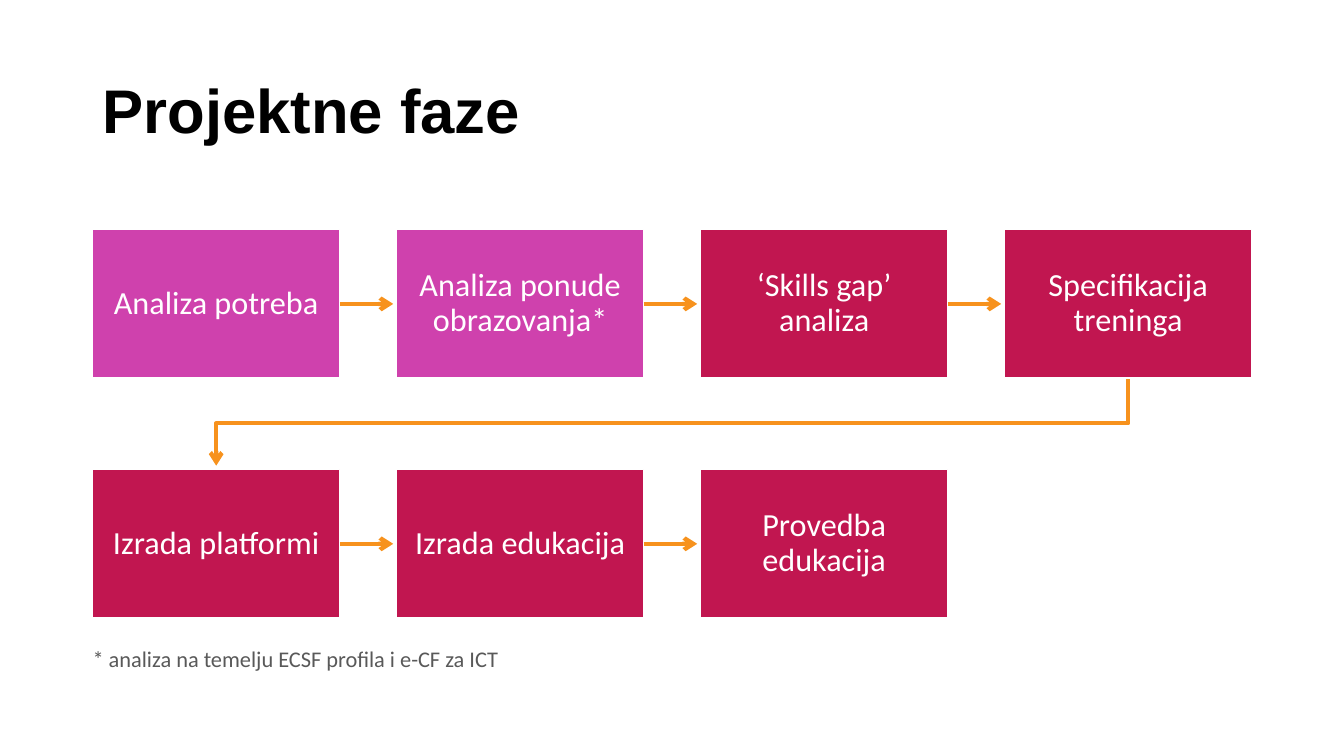
from dataclasses import dataclass

from lxml.etree import SubElement
from pptx import Presentation
from pptx.dml.color import RGBColor
from pptx.enum.shapes import MSO_CONNECTOR, MSO_SHAPE
from pptx.enum.text import MSO_ANCHOR, PP_ALIGN
from pptx.oxml.ns import qn
from pptx.util import Inches, Pt

COLORS = {
    "pink": "CF41AD",
    "red": "C11650",
    "orange": "F7921D",
    "white": "FFFFFF",
    "black": "000000",
    "grey": "595959",
}
LEFT, BOX_W, BOX_H, STEP_X = 0.92, 2.45, 1.47, 3.015
ROW_TOPS = (2.28, 4.66)
ARROW_LEN = 0.53


@dataclass
class Phase:
    text: str
    row: int
    col: int
    color: str = "red"
    arrow: bool = True

    @property
    def left(self) -> float:
        return LEFT + self.col * STEP_X

    @property
    def top(self) -> float:
        return ROW_TOPS[self.row]


PHASES = [
    Phase("Analiza potreba", 0, 0, "pink"),
    Phase("Analiza ponude obrazovanja*", 0, 1, "pink"),
    Phase("‘Skills gap’ analiza", 0, 2),
    Phase("Specifikacija treninga", 0, 3, arrow=False),
    Phase("Izrada platformi", 1, 0),
    Phase("Izrada edukacija", 1, 1),
    Phase("Provedba edukacija", 1, 2, arrow=False),
]


def rgb(name: str) -> RGBColor:
    return RGBColor.from_string(COLORS[name])


def add_run(p, text: str, size: float, color: str, font: str = "Calibri", bold: bool = False) -> None:
    r = p.add_run()
    r.text = text
    r.font.name = font
    r.font.size = Pt(size)
    r.font.bold = bold
    r.font.color.rgb = rgb(color)


def style_arrow(line) -> None:
    line.color.rgb = rgb("orange")
    line.width = Pt(3)
    SubElement(line._get_or_add_ln(), qn("a:tailEnd"), type="arrow")


def add_phase(s, phase: Phase):
    sp = s.shapes.add_shape(MSO_SHAPE.RECTANGLE, Inches(phase.left), Inches(phase.top),
                            Inches(BOX_W), Inches(BOX_H))
    sp.shadow.inherit = False
    sp.fill.solid()
    sp.fill.fore_color.rgb = rgb(phase.color)
    sp.line.color.rgb = rgb("white")
    sp.line.width = Pt(1)
    tf = sp.text_frame
    tf.word_wrap = True
    tf.vertical_anchor = MSO_ANCHOR.MIDDLE
    tf.margin_left = tf.margin_right = tf.margin_top = tf.margin_bottom = Inches(0.18)
    p = tf.paragraphs[0]
    p.alignment = PP_ALIGN.CENTER
    p.line_spacing = 0.9
    add_run(p, phase.text, 23, "white")
    return sp


def add_arrow(s, phase: Phase, box) -> None:
    x, y = phase.left + BOX_W, phase.top + BOX_H / 2
    cxn = s.shapes.add_connector(MSO_CONNECTOR.STRAIGHT, Inches(x), Inches(y),
                                 Inches(x + ARROW_LEN), Inches(y))
    cxn.begin_connect(box, 3)
    style_arrow(cxn.line)
    SubElement(cxn._element.spPr, qn("a:effectLst"))


def add_row_link(s, start: Phase, end: Phase) -> None:
    x1, x2 = start.left + BOX_W / 2, end.left + BOX_W / 2
    points = [(x1, start.top + BOX_H), (x1, 4.2), (x2, 4.2), (x2, end.top - 0.04)]
    emu = [(Inches(x), Inches(y)) for x, y in points]
    builder = s.shapes.build_freeform(*emu[0])
    builder.add_line_segments(emu[1:], close=False)
    sp = builder.convert_to_shape()
    sp.shadow.inherit = False
    sp.fill.background()
    style_arrow(sp.line)


def main() -> None:
    prs = Presentation()
    prs.slide_width, prs.slide_height = Inches(13.33), Inches(7.5)
    s = prs.slides.add_slide(prs.slide_layouts[6])

    # Title
    tf = s.shapes.add_textbox(Inches(LEFT), Inches(0.4), Inches(11.5), Inches(1.45)).text_frame
    tf.word_wrap = True
    tf.vertical_anchor = MSO_ANCHOR.MIDDLE
    p = tf.paragraphs[0]
    p.line_spacing = 0.9
    add_run(p, "Projektne faze", 44, "black", "Arial", True)

    # Link from the first row to the second
    add_row_link(s, PHASES[3], PHASES[4])

    # Phases and the arrows between them
    for phase in PHASES:
        box = add_phase(s, phase)
        if phase.arrow:
            add_arrow(s, phase, box)

    # Footnote
    tf = s.shapes.add_textbox(Inches(0.82), Inches(6.35), Inches(4.28), Inches(0.37)).text_frame
    tf.word_wrap = False
    add_run(tf.paragraphs[0], "* analiza na temelju ECSF profila i e-CF za ICT", 16, "grey")

    prs.save("out.pptx")


if __name__ == "__main__":
    main()
